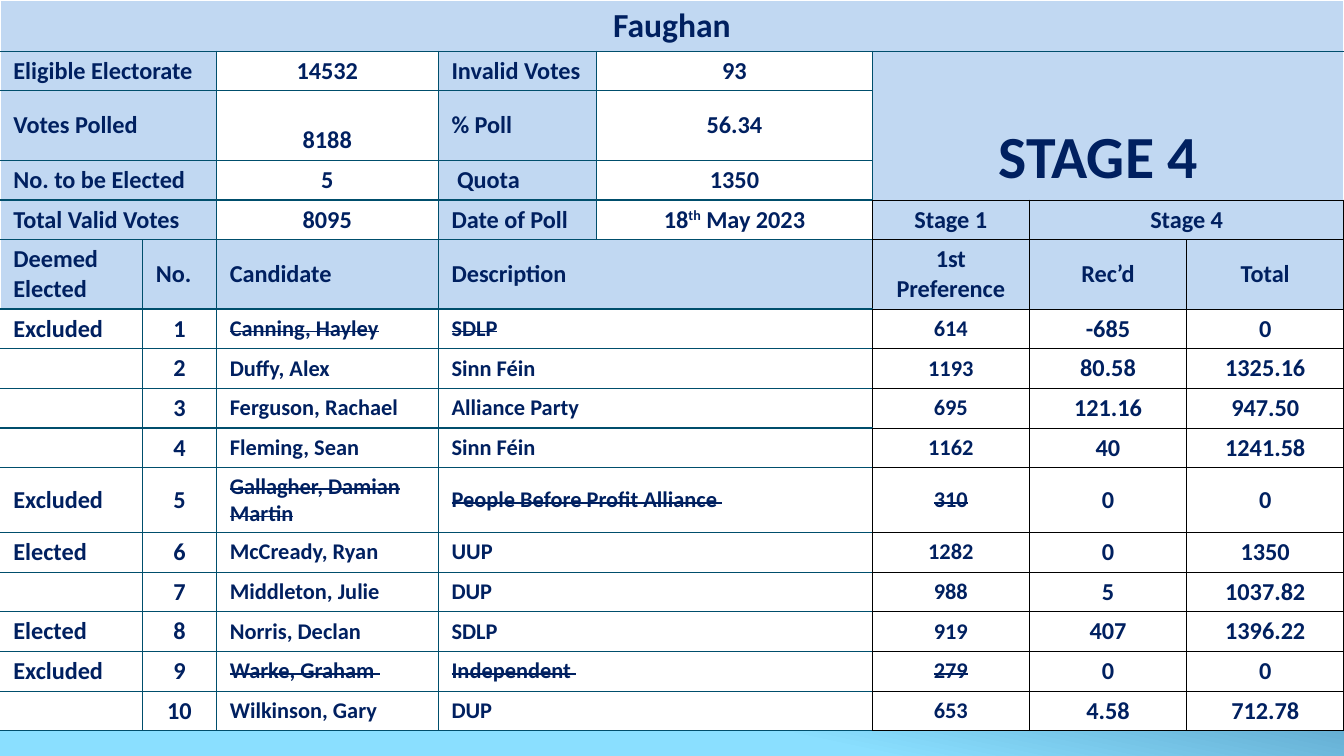
from lxml import etree
from pptx import Presentation
from pptx import util as u
from pptx.dml.color import RGBColor
from pptx.enum import text
from pptx.oxml.ns import qn

NAVY = RGBColor(0x00, 0x20, 0x60)
PALE_BLUE = RGBColor(0xC1, 0xD8, 0xF2)
WHITE = RGBColor(0xFF, 0xFF, 0xFF)
TEAL = RGBColor(0x00, 0x4E, 0x6C)
BLACK = RGBColor(0x00, 0x00, 0x00)
DEEP_BLUE = RGBColor(0x0D, 0x38, 0x68)
SKY_BLUE = RGBColor(0x8A, 0xDF, 0xFF)

SLIDE_WIDTH = u.Inches(10)
SLIDE_HEIGHT = SLIDE_WIDTH * 9 // 16
TABLE_HEIGHT = u.Inches(5.37)
COLUMNS = [1.06, 0.55, 1.65, 1.18, 2.05, 1.17, 1.17, 1.17]
ROWS = [0.37] + [0.28] * 4 + [0.48] + [0.28] * 10
STAGE_COLUMN = 5
STAGE_ROW = 4
HEADING_ROW = 5

WHITE_EDGE = (WHITE, 1)
TEAL_EDGE = (TEAL, 0.75)
BLACK_EDGE = (BLACK, 0.5)

SUMMARY = [
    ("Eligible Electorate", "14532", "Invalid Votes", "93"),
    ("Votes Polled", "8188", "% Poll", "56.34"),
    ("No. to be Elected", "5", " Quota", "1350"),
    ("Total Valid Votes", "8095", "Date of Poll", "18th May 2023"),
]
HEADINGS = {0: "Deemed Elected", 1: "No.", 2: "Candidate", 3: "Description",
            5: "1st Preference", 6: "Rec’d", 7: "Total"}
CANDIDATES = [
    ("Excluded", "Canning, Hayley", "SDLP", "614", "-685", "0"),
    ("", "Duffy, Alex", "Sinn Féin", "1193", "80.58", "1325.16"),
    ("", "Ferguson, Rachael", "Alliance Party", "695", "121.16", "947.50"),
    ("", "Fleming, Sean", "Sinn Féin", "1162", "40", "1241.58"),
    ("Excluded", "Gallagher, Damian Martin", "People Before Profit Alliance ", "310", "0", "0"),
    ("Elected", "McCready, Ryan", "UUP", "1282", "0", "1350"),
    ("", "Middleton, Julie", "DUP", "988", "5", "1037.82"),
    ("Elected", "Norris, Declan", "SDLP", "919", "407", "1396.22"),
    ("Excluded", "Warke, Graham ", "Independent ", "279", "0", "0"),
    ("", "Wilkinson, Gary", "DUP", "653", "4.58", "712.78"),
]
STRUCK_COLUMNS = {1: (2, 3), 5: (2, 3, 5), 9: (2, 3, 5)}


def paint_background(slide):
    fill = slide.background.fill
    fill.gradient()
    fill.gradient_angle = 360 - 102
    for stop, position, color in zip(fill.gradient_stops, (0.42, 0.82), (DEEP_BLUE, SKY_BLUE)):
        stop.position = position
        stop.color.rgb = color


def write(cell, words, size=13, centred=False, struck=False):
    cell.vertical_anchor = text.MSO_ANCHOR.MIDDLE
    cell.margin_left = cell.margin_right = u.Inches(0.1)
    cell.margin_top = cell.margin_bottom = u.Pt(2.7)
    paragraph = cell.text_frame.paragraphs[0]
    paragraph.alignment = text.PP_ALIGN.CENTER if centred else text.PP_ALIGN.LEFT
    if not words:
        etree.SubElement(paragraph._p, qn("a:endParaRPr"), sz=str(size * 100))
    for part in [words] if isinstance(words, str) else words:
        if part:
            run = paragraph.add_run()
            run.text = part
            run.font.name = "Calibri"
            run.font.size = u.Pt(size)
            run.font.bold = True
            run.font.color.rgb = NAVY
            if struck:
                run.font._element.set("strike", "sngStrike")


def edges(row, column):
    if row == 0:
        return WHITE_EDGE, WHITE_EDGE, WHITE_EDGE, TEAL_EDGE
    if column >= STAGE_COLUMN:
        if row >= STAGE_ROW:
            return (BLACK_EDGE,) * 4
        return TEAL_EDGE, WHITE_EDGE, TEAL_EDGE, BLACK_EDGE
    left = WHITE_EDGE if column == 0 else TEAL_EDGE
    meets_stage = column == STAGE_COLUMN - 1 or (column == 3 and row >= HEADING_ROW)
    right = BLACK_EDGE if meets_stage and row >= STAGE_ROW else TEAL_EDGE
    return left, right, TEAL_EDGE, TEAL_EDGE


def draw_edges(cell, sides):
    properties = cell._tc.get_or_add_tcPr()
    for index, (tag, (color, width)) in enumerate(zip(("lnL", "lnR", "lnT", "lnB"), sides)):
        line = etree.Element(qn(f"a:{tag}"), w=str(u.Pt(width)))
        solid = etree.SubElement(line, qn("a:solidFill"))
        etree.SubElement(solid, qn("a:srgbClr"), val=str(color))
        properties.insert(index, line)


def shade_grid(table):
    for row in range(len(ROWS)):
        for column in range(len(COLUMNS)):
            cell = table.cell(row, column)
            value_area = 1 <= row <= STAGE_ROW and column in (2, 4)
            cell.fill.solid()
            cell.fill.fore_color.rgb = WHITE if value_area or row > HEADING_ROW else PALE_BLUE
            draw_edges(cell, edges(row, column))


def merge_cells(table):
    table.cell(0, 0).merge(table.cell(0, len(COLUMNS) - 1))
    table.cell(1, STAGE_COLUMN).merge(table.cell(STAGE_ROW - 1, len(COLUMNS) - 1))
    table.cell(STAGE_ROW, 6).merge(table.cell(STAGE_ROW, 7))
    for row in range(1, STAGE_ROW + 1):
        table.cell(row, 0).merge(table.cell(row, 1))
    for row in range(HEADING_ROW, len(ROWS)):
        table.cell(row, 3).merge(table.cell(row, 4))


def fill_summary(table):
    write(table.cell(0, 0), "Faughan", 18, centred=True)
    for row, facts in enumerate(SUMMARY, start=1):
        for column, fact in zip((0, 2, 3, 4), facts):
            if column == 4 and row == STAGE_ROW:
                fact = fact.partition("th")
            write(table.cell(row, column), fact, centred=column in (2, 4))
    date = table.cell(STAGE_ROW, 4).text_frame.paragraphs[0]
    date.runs[1].font._element.set("baseline", "30000")
    table.cell(2, 2).margin_top = u.Inches(0.26)


def fill_stage(table):
    stage = table.cell(1, STAGE_COLUMN)
    write(stage, ("STAGE 4 ", " "), 32, centred=True)
    stage.text_frame.paragraphs[0].runs[1].font.size = u.Pt(13)
    stage.vertical_anchor = text.MSO_ANCHOR.BOTTOM
    for column, label in ((5, "Stage 1"), (6, "Stage 4")):
        write(table.cell(STAGE_ROW, column), label, centred=True)


def fill_candidates(table):
    for column, heading in HEADINGS.items():
        write(table.cell(HEADING_ROW, column), heading, centred=column >= STAGE_COLUMN)
    for number, (status, *details) in enumerate(CANDIDATES, start=1):
        for column, entry in zip(HEADINGS, (status, str(number), *details)):
            write(table.cell(HEADING_ROW + number, column), entry,
                  size=12 if column in (2, 3, 5) else 13,
                  centred=column == 1 or column >= STAGE_COLUMN,
                  struck=column in STRUCK_COLUMNS.get(number, ()))


def add_results(slide):
    frame = slide.shapes.add_table(len(ROWS), len(COLUMNS), 0, 0, SLIDE_WIDTH, TABLE_HEIGHT)
    table = frame.table
    table.first_row = table.horz_banding = False
    for column, width in zip(table.columns, COLUMNS):
        column.width = u.Inches(width)
    for row, height in zip(table.rows, ROWS):
        row.height = u.Inches(height)
    frame.height = TABLE_HEIGHT
    shade_grid(table)
    merge_cells(table)
    fill_summary(table)
    fill_stage(table)
    fill_candidates(table)


def main():
    deck = Presentation()
    deck.slide_width, deck.slide_height = SLIDE_WIDTH, SLIDE_HEIGHT
    slide = deck.slides.add_slide(deck.slide_layouts[6])
    paint_background(slide)
    add_results(slide)
    deck.save("out.pptx")


if __name__ == "__main__":
    main()
